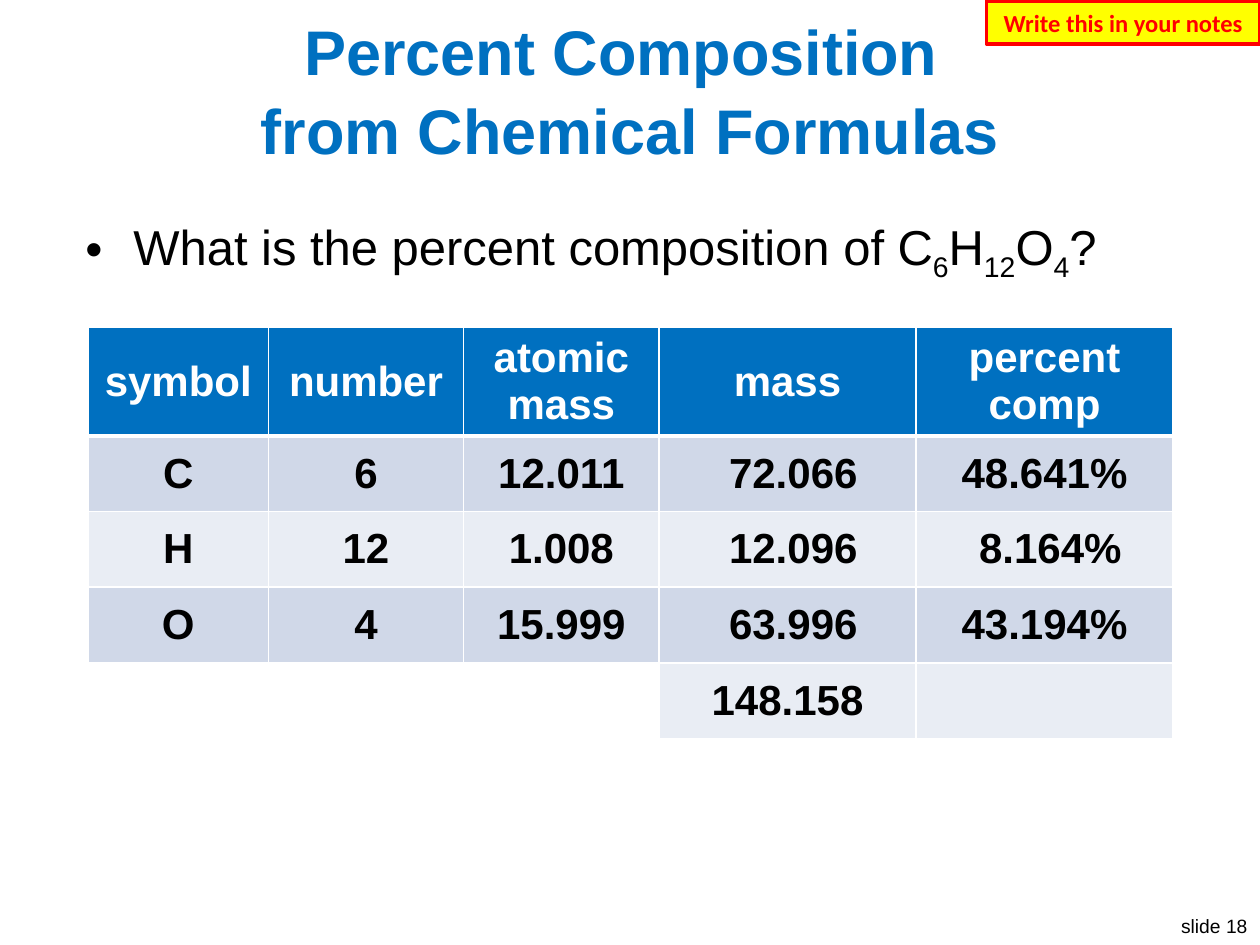
from lxml import etree
from pptx import Presentation
from pptx.dml.color import RGBColor
from pptx.enum import shapes, text
from pptx.oxml import ns
from pptx.util import Inches, Pt

theme = {
    "font": "Arial", "badge_font": "Calibri",
    "blue": "0070C0", "black": "000000", "white": "FFFFFF", "red": "FF0000",
    "yellow": "FFFF00", "bands": ["D0D8E8", "E9EDF4"],
    "title": 36, "question": 28, "cell": 24, "badge": 14, "number": 11,
}

deck = Presentation()
deck.slide_width, deck.slide_height = Inches(10), Inches(7.5)
slide = deck.slides.add_slide(deck.slide_layouts[6])
column, row = deck.slide_width / 100, deck.slide_height / 75


def area(left, top, width, height):
    return [int(left * column), int(top * row), int(width * column), int(height * row)]


def style(paragraph, size, color, bold=False, align=text.PP_ALIGN.CENTER, font=theme["font"]):
    paragraph.alignment = align
    for run in paragraph.runs:
        run.font.name, run.font.size, run.font.bold = font, Pt(size), bold
        run.font.color.rgb = RGBColor.from_string(color)


number = slide.shapes.add_textbox(*area(92.5, 72.1, 7.5, 2.9)).text_frame
number.word_wrap = False
number.text = "slide 18"
style(number.paragraphs[0], theme["number"], theme["black"], align=text.PP_ALIGN.RIGHT)

title = slide.shapes.add_textbox(*area(2, 3, 96, 8)).text_frame
title.word_wrap = True
title.vertical_anchor = text.MSO_ANCHOR.MIDDLE
title.text = "Percent Composition \vfrom Chemical Formulas"
title.paragraphs[0].line_spacing = 1.05
style(title.paragraphs[0], theme["title"], theme["blue"], bold=True)

composition = [
    ["symbol", "number", "atomic mass", "mass", "percent comp"],
    ["C", "6", "12.011", " 72.066", "48.641%"],
    ["H", "12", "1.008", " 12.096", " 8.164%"],
    ["O", "4", "15.999", " 63.996", "43.194%"],
    [None, None, None, "148.158", ""],
]
widths = [14.3, 15.5, 15.5, 20.4, 20.4]
heights = [8.3] + [6] * 4
table = slide.shapes.add_table(5, 5, *area(7, 26, sum(widths), sum(heights))).table
table.first_row = table.horz_banding = False
for index, width in enumerate(widths):
    table.columns[index].width = int(width * column)
for r, values in enumerate(composition):
    table.rows[r].height = int(heights[r] * row)
    for c, value in enumerate(values):
        cell = table.cell(r, c)
        cell.margin_top = cell.margin_bottom = Inches(0.03)
        cell.vertical_anchor = text.MSO_ANCHOR.MIDDLE
        cell.text = value or ""
        style(cell.text_frame.paragraphs[0], theme["cell"],
              theme["black"] if r else theme["white"], bold=True)
        properties = cell._tc.get_or_add_tcPr()
        for side in ["lnL", "lnR", "lnT", "lnB"]:
            heavy = (r == 0 and side == "lnB") or (r == 1 and side == "lnT")
            border = etree.SubElement(properties, ns.qn("a:" + side), w=str(Pt(3 if heavy else 1)))
            paint = etree.SubElement(border, ns.qn("a:solidFill"))
            etree.SubElement(paint, ns.qn("a:srgbClr"), val=theme["white"])
        if value is None:
            cell.fill.background()
        else:
            cell.fill.solid()
            cell.fill.fore_color.rgb = RGBColor.from_string(
                theme["bands"][(r - 1) % 2] if r else theme["blue"])

question = slide.shapes.add_textbox(*area(5.8, 16.7, 88.5, 7.4)).text_frame
question.word_wrap = True
prompt = question.paragraphs[0]
prompt.space_before = Pt(12)
for part in ["What is the percent composition of C", "6", "H", "12", "O", "4", "?"]:
    run = prompt.add_run()
    run.text = part
    if part.isdigit():
        run._r.get_or_add_rPr().set("baseline", "-25000")
style(prompt, theme["question"], theme["black"], align=text.PP_ALIGN.LEFT)
indent = prompt._p.get_or_add_pPr()
indent.set("marL", str(Inches(0.38)))
indent.set("indent", str(-Inches(0.38)))
etree.SubElement(indent, ns.qn("a:buFont"), typeface=theme["font"])
etree.SubElement(indent, ns.qn("a:buChar"), char="•")

badge = slide.shapes.add_shape(shapes.MSO_SHAPE.RECTANGLE, *area(78.3, 0.1, 21.7, 3.4))
badge.shadow.inherit = False
badge.fill.solid()
badge.fill.fore_color.rgb = RGBColor.from_string(theme["yellow"])
badge.line.color.rgb = RGBColor.from_string(theme["red"])
badge.line.width = Pt(2.25)
badge.text_frame.text = "Write this in your notes"
style(badge.text_frame.paragraphs[0], theme["badge"], theme["red"], bold=True,
      font=theme["badge_font"])

deck.save("out.pptx")
